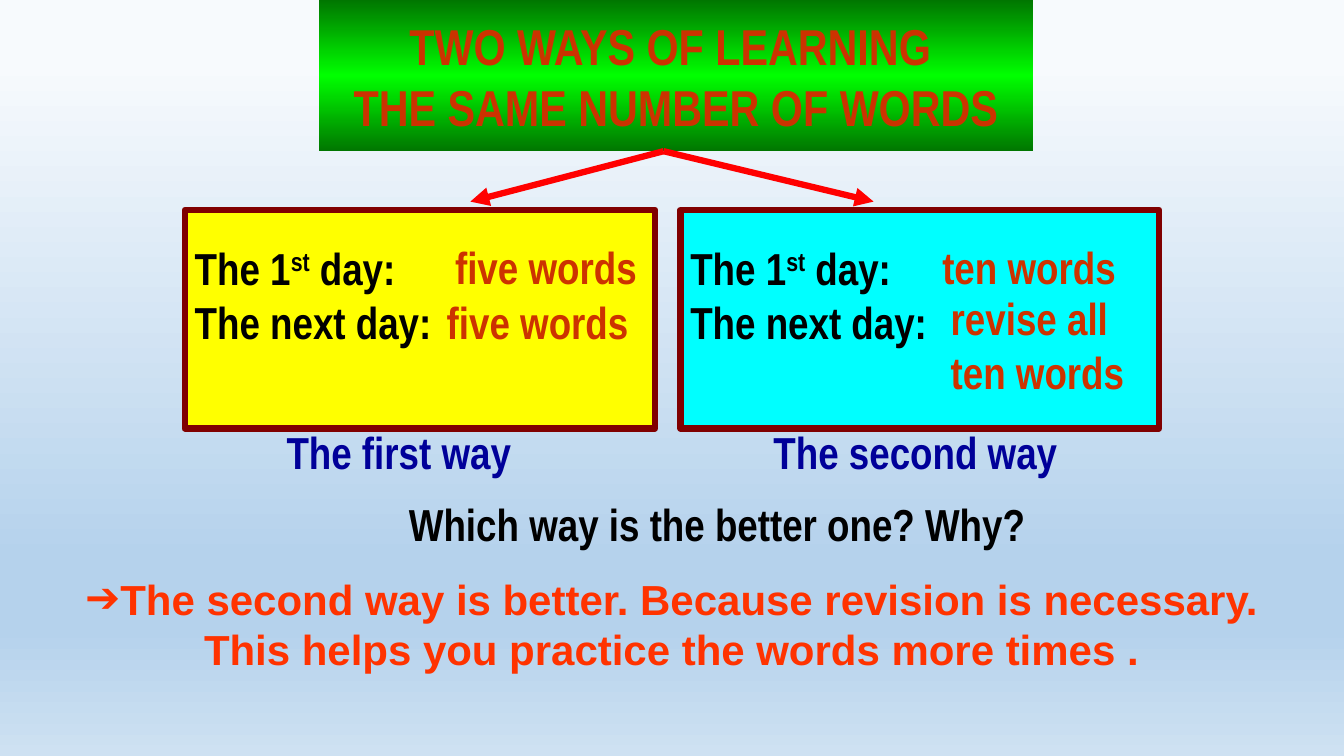
import pptx
import pptx.dml.color
import pptx.enum.shapes
import pptx.enum.text
import pptx.oxml
import pptx.oxml.ns
import pptx.util
import lxml.etree

PX = 9525
HUES = {
    "black": "000000", "rust": "CC3300", "navy": "000099", "orange": "FF3300",
    "red": "FF0000", "maroon": "800000", "yellow": "FFFF00", "cyan": "00FFFF",
    "green": "00FF00", "forest": "007600",
    "pale": "F7FAFD", "sky": "B5D2EC", "mist": "CEE1F2",
}
NARROW = "Arial Narrow"
ALIGN = pptx.enum.text.PP_ALIGN
ANCHOR = pptx.enum.text.MSO_ANCHOR
FIT = pptx.enum.text.MSO_AUTO_SIZE


def hue(name):
    return pptx.dml.color.RGBColor.from_string(HUES[name])


def px(*nums):
    return [pptx.util.Emu(num * PX) for num in nums]


def tag(root, name, **attrs):
    return lxml.etree.SubElement(root, pptx.oxml.ns.qn(name), **attrs)


def blend(fill, root, stops):
    """Fill with a gradient that runs from top to bottom."""
    fill.gradient()
    fill.gradient_angle = 270
    group = root.find(".//" + pptx.oxml.ns.qn("a:gsLst"))
    for stop in list(group):
        group.remove(stop)
    for place, name in stops:
        stop = tag(group, "a:gs", pos=str(place * 1000))
        tag(stop, "a:srgbClr", val=HUES[name])


def write(shape, lines, size, color, font=NARROW, align=ALIGN.LEFT,
          anchor=ANCHOR.TOP, wrap=True):
    """Each line is a list of runs; a run that starts with ^ is raised."""
    frame = shape.text_frame
    frame.word_wrap = wrap
    frame.auto_size = FIT.NONE
    frame.vertical_anchor = anchor
    for num, parts in enumerate(lines):
        para = frame.add_paragraph() if num else frame.paragraphs[0]
        para.alignment = align
        para.space_before = pptx.util.Pt(0)
        for part in parts:
            run = para.add_run()
            run.text = part.lstrip("^")
            run.font.name = font
            run.font.size = pptx.util.Pt(size)
            run.font.bold = True
            run.font.color.rgb = hue(color)
            if part.startswith("^"):
                run.font._element.set("baseline", "30000")
    return frame


def place(shape, box):
    shape.left, shape.top, shape.width, shape.height = px(*box)


def label(page, box, lines, color, **style):
    shape = page.shapes.add_textbox(*px(*box))
    write(shape, [[line] for line in lines], 32, color, **style)


# Title banner with two arrows below it
def banner(page, box):
    title = page.shapes.title
    place(title, box)
    blend(title.fill, title._element,
          [(0, "forest"), (50, "green"), (100, "forest")])
    write(title, [["TWO WAYS OF LEARNING "], ["THE SAME NUMBER OF WORDS"]],
          36, "rust", align=ALIGN.CENTER, anchor=ANCHOR.MIDDLE)
    left, top, wide, high = box
    base = top + high
    for tip in (144, 528):
        arrow = page.shapes.add_connector(
            pptx.enum.shapes.MSO_CONNECTOR.STRAIGHT,
            *px(left + 328, base, left + tip, base + 48))
        arrow.line.color.rgb = hue("red")
        arrow.line.width = pptx.util.Pt(4.5)
        tag(arrow.line._get_or_add_ln(), "a:tailEnd", type="triangle")
        tag(arrow._element.spPr, "a:effectLst")


# One way of learning: panel, its answers and its caption
def panel(page, box, color, words, name, inset, span):
    left, top, wide, high = box
    rect = page.shapes.add_shape(
        pptx.enum.shapes.MSO_SHAPE.RECTANGLE, *px(*box))
    rect.shadow.inherit = False
    rect.fill.solid()
    rect.fill.fore_color.rgb = hue(color)
    rect.line.color.rgb = hue("maroon")
    rect.line.width = pptx.util.Pt(4.5)
    frame = write(rect, [["The 1", "^st", " day:"], ["The next day:"]],
                  32, "black")
    frame.margin_top = px(29)[0]
    for right, down, lines in words:
        label(page, (left + right, top + down, 188, 8 + 52 * len(lines)),
              lines, "rust", wrap=False)
    label(page, (left + inset, top + high - 8, span, 60), [name], "navy",
          align=ALIGN.CENTER)


# Answer in the body placeholder, with an arrow bullet
def answer(page, box):
    body = page.placeholders[1]
    place(body, box)
    props = body.text_frame.paragraphs[0]._p.get_or_add_pPr()
    props.set("marL", "0")
    props.set("indent", "0")
    tag(props, "a:buFont", typeface="Arial")
    tag(props, "a:buChar", char="➔")
    write(body, [["The second way is better. Because revision is necessary. "
                  "This helps you practice the words more times ."]],
          30, "orange", font="Arial", align=ALIGN.CENTER)


def main():
    deck = pptx.Presentation()
    deck.slide_width, deck.slide_height = px(1280, 720)
    page = deck.slides.add_slide(deck.slide_layouts[1])
    blend(page.background.fill, page._element,
          [(8, "pale"), (74, "sky"), (83, "sky"), (100, "mist")])
    banner(page, (304, 0, 680, 144))
    panel(page, (176, 200, 448, 208), "yellow",
          [(248, 24, ["five words"]), (240, 76, ["five words"])],
          "The first way", 16, 376)
    panel(page, (648, 200, 456, 208), "cyan",
          [(240, 24, ["ten words"]), (248, 72, ["revise all", "ten words"])],
          "The second way", 40, 368)
    label(page, (380, 468, 640, 60), ["Which way is the better one? Why?"],
          "black")
    answer(page, (61, 541, 1158, 107))
    deck.save("out.pptx")


if __name__ == "__main__":
    main()
